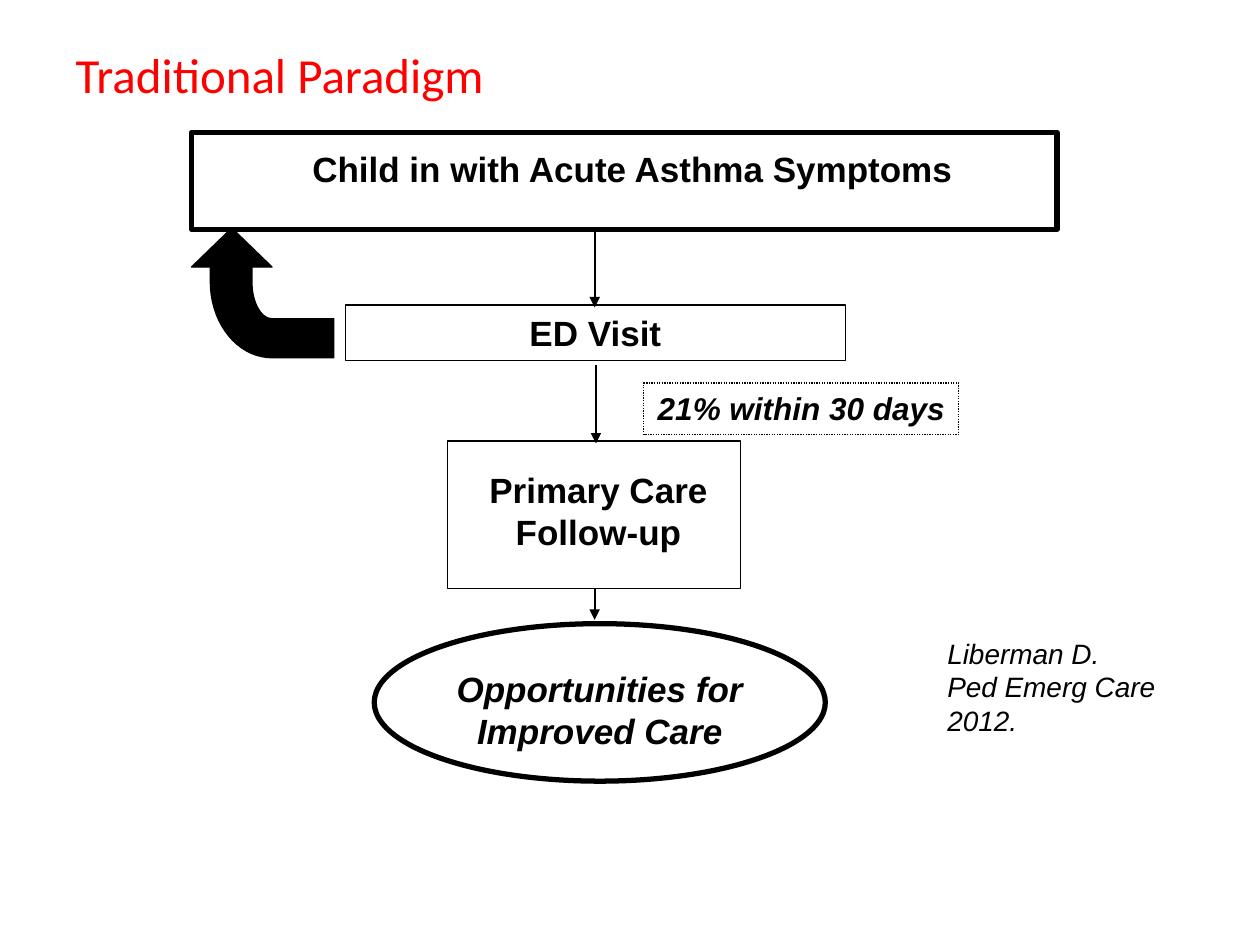
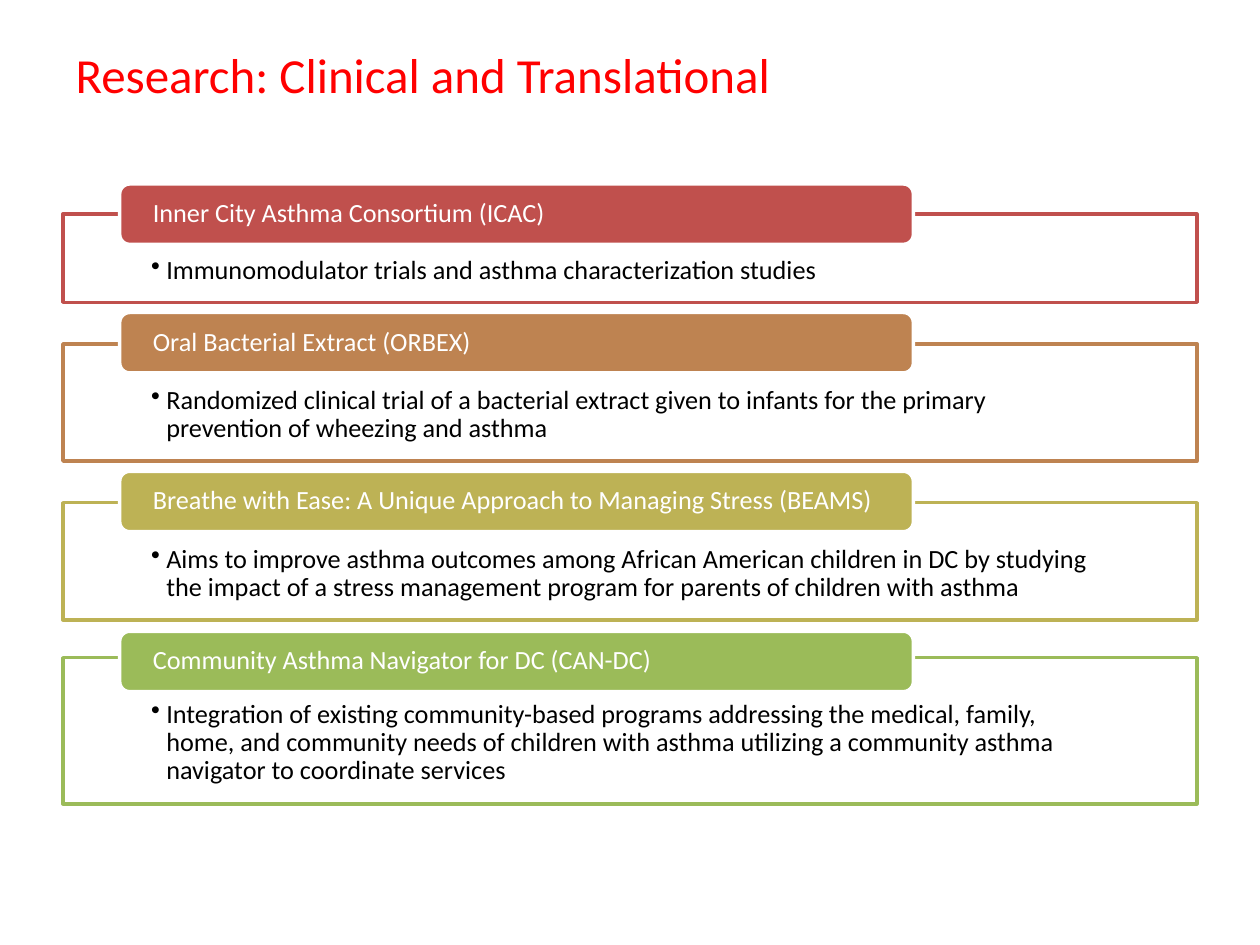
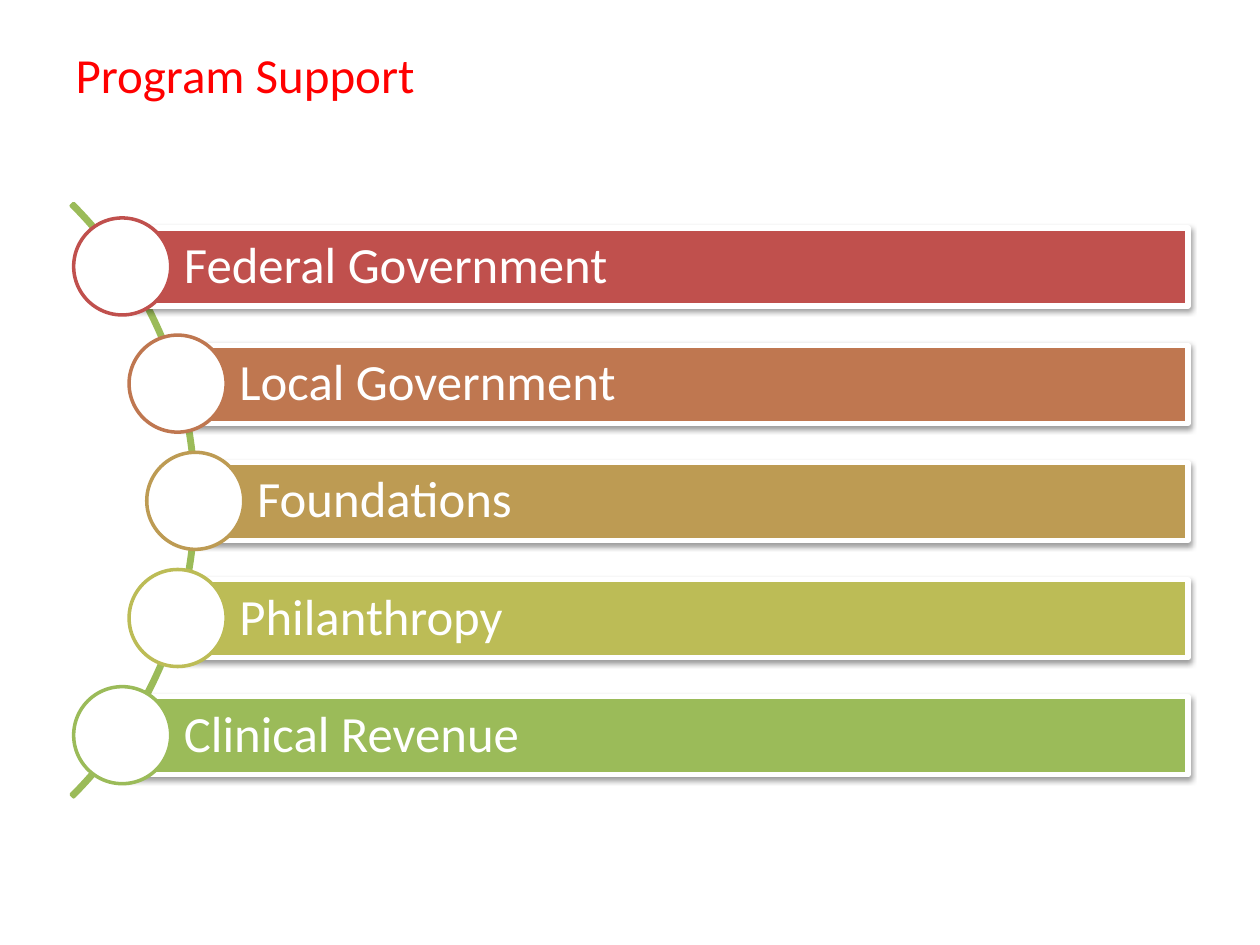
import math

from lxml import etree
from pptx import Presentation
from pptx.dml.color import RGBColor
from pptx.enum.dml import MSO_LINE
from pptx.enum.shapes import MSO_CONNECTOR, MSO_SHAPE
from pptx.enum.text import MSO_ANCHOR, PP_ALIGN
from pptx.oxml.ns import qn
from pptx.util import Inches, Pt

RECTANGLE = MSO_SHAPE.RECTANGLE
ROUNDED = MSO_SHAPE.ROUNDED_RECTANGLE
OVAL = MSO_SHAPE.OVAL
BLOCK_ARC = MSO_SHAPE.BLOCK_ARC
STRAIGHT = MSO_CONNECTOR.STRAIGHT
DOTTED = MSO_LINE.ROUND_DOT
LEFT, CENTER = PP_ALIGN.LEFT, PP_ALIGN.CENTER
TOP, MIDDLE = MSO_ANCHOR.TOP, MSO_ANCHOR.MIDDLE

BLACK = RGBColor(0x00, 0x00, 0x00)
WHITE = RGBColor(0xFF, 0xFF, 0xFF)
TITLE_RED = RGBColor(0xFF, 0x00, 0x00)
RED = RGBColor(0xC0, 0x50, 0x4D)
ORANGE = RGBColor(0xBE, 0x83, 0x51)
OLIVE = RGBColor(0xBD, 0xB2, 0x55)
GREEN = RGBColor(0x9B, 0xBB, 0x59)
COPPER = RGBColor(0xBF, 0x77, 0x50)
OCHRE = RGBColor(0xBD, 0x9B, 0x53)
LIME = RGBColor(0xBC, 0xBC, 0x56)


def add_block(page, kind, place, fill=None, line=None, width=0):
    """Add a preset shape, or a text box when kind is None."""
    place = [Inches(value) for value in place]
    if kind is None:
        return page.shapes.add_textbox(*place)
    block = page.shapes.add_shape(kind, *place)
    block.shadow.inherit = False
    if fill is None:
        block.fill.background()
    else:
        block.fill.solid()
        block.fill.fore_color.rgb = fill
    block.line.color.rgb = line
    block.line.width = Pt(width)
    return block


def write(box, text, size, color, font="Calibri", align=LEFT, anchor=TOP,
          margins=(0.1, 0.05, 0.1, 0.05), spacing=1.0, bold=False, italic=False,
          bullet=False):
    """Fill a shape with one formatted paragraph."""
    frame = box.text_frame
    frame.word_wrap = True
    frame.vertical_anchor = anchor
    (frame.margin_left, frame.margin_top,
     frame.margin_right, frame.margin_bottom) = [Inches(value) for value in margins]
    frame.text = text
    para = frame.paragraphs[0]
    para.alignment = align
    para.line_spacing = spacing
    if bullet:
        properties = para._p.get_or_add_pPr()
        properties.set("marL", str(Inches(0.12)))
        properties.set("indent", str(-Inches(0.12)))
        etree.SubElement(properties, qn("a:buChar")).set("char", "•")
    for span in para.runs:
        span.font.name = font
        span.font.size = Pt(size)
        span.font.color.rgb = color
        span.font.bold = bold
        span.font.italic = italic


deck = Presentation()
deck.slide_width, deck.slide_height = Inches(10), Inches(7.5)

# Pages with their shared title style
pages = []
for heading in ("Traditional Paradigm", "Research: Clinical and Translational",
                "Program Support"):
    page = deck.slides.add_slide(deck.slide_layouts[5])
    title = page.shapes.title
    title.left, title.top = Inches(0.5), Inches(0.3)
    title.width, title.height = Inches(9), Inches(1.25)
    write(title, heading, 28, TITLE_RED)
    pages.append(page)
paradigm_page, research_page, support_page = pages

# Paradigm: boxes and labels of the flow (kind, place, line width, text, size, italic)
flow = [
    (RECTANGLE, (1.52, 1.05, 6.87, 0.77), 3, "", 0, False),
    (None, (1.02, 1.12, 8, 0.44), 0, "Child in with Acute Asthma Symptoms", 20, False),
    (RECTANGLE, (2.74, 2.42, 3.97, 0.44), 0.75, "ED Visit", 20, False),
    (RECTANGLE, (3.55, 3.5, 2.33, 1.17), 0.75, "", 0, False),
    (None, (3.67, 3.67, 2.16, 0.77), 0, "Primary Care Follow-up", 20, False),
    (OVAL, (2.97, 4.95, 3.58, 1.25), 3, "", 0, False),
    (None, (3.3, 5.25, 2.92, 0.77), 0, "Opportunities for Improved Care", 20, True),
]
for kind, place, width, text, size, italic in flow:
    block = add_block(paradigm_page, kind, place, line=BLACK, width=width)
    if text:
        write(block, text, size, BLACK, "Arial", CENTER, bold=True, italic=italic)

rate = add_block(paradigm_page, RECTANGLE, (5.11, 3.04, 2.5, 0.41), line=BLACK, width=0.75)
rate.line.dash_style = DOTTED
write(rate, "21% within 30 days", 18, BLACK, "Arial", CENTER, bold=True, italic=True)

citation = add_block(paradigm_page, None, (7.42, 5, 2.17, 0.9))
write(citation, "Liberman D.\vPed Emerg Care 2012.", 16, BLACK, "Arial", italic=True)

# Paradigm: arrows down the flow
for x, start, end in ((4.72, 1.82, 2.44), (4.73, 2.9, 3.52), (4.72, 4.67, 4.92)):
    arrow = paradigm_page.shapes.add_connector(
        STRAIGHT, Inches(x), Inches(start), Inches(x), Inches(end))
    arrow.line.color.rgb = BLACK
    arrow.line.width = Pt(1)
    etree.SubElement(arrow.line._get_or_add_ln(), qn("a:tailEnd")).set("type", "triangle")
    etree.SubElement(arrow._element.spPr, qn("a:effectLst"))

# Paradigm: bent arrow back to the start, its bend made of two quarter ellipses
bend_x, bend_y = 2.16, 2.24
steps = [math.radians(angle) for angle in range(0, 91, 5)]
outer = [(bend_x - 0.49 * math.cos(a), bend_y + 0.6 * math.sin(a)) for a in steps]
inner = [(bend_x - 0.16 * math.cos(a), bend_y + 0.29 * math.sin(a)) for a in steps]
outline = ([(1.52, 2.12), (1.67, 2.12)] + outer + [(2.65, 2.84), (2.65, 2.53)]
           + inner[::-1] + [(2, 2.12), (2.16, 2.12)])
builder = paradigm_page.shapes.build_freeform(Inches(1.84), Inches(1.81))
builder.add_line_segments([(Inches(x), Inches(y)) for x, y in outline], close=True)
return_arrow = builder.convert_to_shape()
return_arrow.shadow.inherit = False
return_arrow.fill.solid()
return_arrow.fill.fore_color.rgb = BLACK
return_arrow.line.color.rgb = BLACK
return_arrow.line.width = Pt(0.75)

# Research: framed studies (label top, frame top, frame height, colour, name, summary)
studies = [
    (1.46, 1.7, 0.7, RED, "Inner City Asthma Consortium (ICAC)",
     "Immunomodulator trials and asthma characterization studies"),
    (2.48, 2.73, 0.93, ORANGE, "Oral Bacterial Extract (ORBEX)",
     "Randomized clinical trial of a bacterial extract given to infants for the "
     "primary prevention of wheezing and asthma"),
    (3.74, 3.99, 0.93, OLIVE,
     "Breathe with Ease: A Unique Approach to Managing Stress (BEAMS)",
     "Aims to improve asthma outcomes among African American children in DC by "
     "studying the impact of a stress management program for parents of children "
     "with asthma"),
    (5.01, 5.22, 1.16, GREEN, "Community Asthma Navigator for DC (CAN-DC)",
     "Integration of existing community-based programs addressing the medical, "
     "family, home, and community needs of children with asthma utilizing a "
     "community asthma navigator to coordinate services"),
]
for label_top, frame_top, height, color, name, summary in studies:
    panel = add_block(research_page, RECTANGLE, (0.5, frame_top, 9, height), WHITE, color, 2)
    write(panel, summary, 15, BLACK, margins=(0.7, 0.34, 0.7, 0.12), spacing=0.9,
          bullet=True)
    label = add_block(research_page, ROUNDED, (0.95, label_top, 6.3, 0.48), color, WHITE, 2)
    write(label, name, 15, WHITE, anchor=MIDDLE, margins=(0.24, 0, 0.24, 0), spacing=0.9)

# Support: arc behind the bars
arc = add_block(support_page, BLOCK_ARC, (-5.1, 0.64, 6.66, 6.66), line=GREEN, width=2)
for index, value in enumerate((189, 27, 0.004)):
    arc.adjustments[index] = value

# Support: shadowed bars, each with a circle centred on its left end
sources = [
    ("Federal Government", 0.97, RED),
    ("Local Government", 1.41, COPPER),
    ("Foundations", 1.55, OCHRE),
    ("Philanthropy", 1.41, LIME),
    ("Clinical Revenue", 0.97, GREEN),
]
bar_right, circle_size = 9.43, 0.77
for row, (name, left, color) in enumerate(sources):
    top = 1.81 + 0.93 * row
    bar = add_block(support_page, RECTANGLE, (left, top, bar_right - left, 0.62),
                    color, WHITE, 3)
    write(bar, name, 29, WHITE, anchor=MIDDLE, margins=(0.49, 0.08, 0.08, 0.08),
          spacing=0.9)
    effects = bar._element.spPr.find(qn("a:effectLst"))
    shadow = etree.SubElement(effects, qn("a:outerShdw"), blurRad=str(Pt(3.1)),
                              dist=str(Pt(1.6)), dir="5400000", rotWithShape="0")
    shade = etree.SubElement(shadow, qn("a:srgbClr"), val="000000")
    etree.SubElement(shade, qn("a:alpha"), val="38000")
    add_block(support_page, OVAL,
              (left - circle_size / 2, top - 0.08, circle_size, circle_size),
              WHITE, color, 2)

deck.save("out.pptx")
